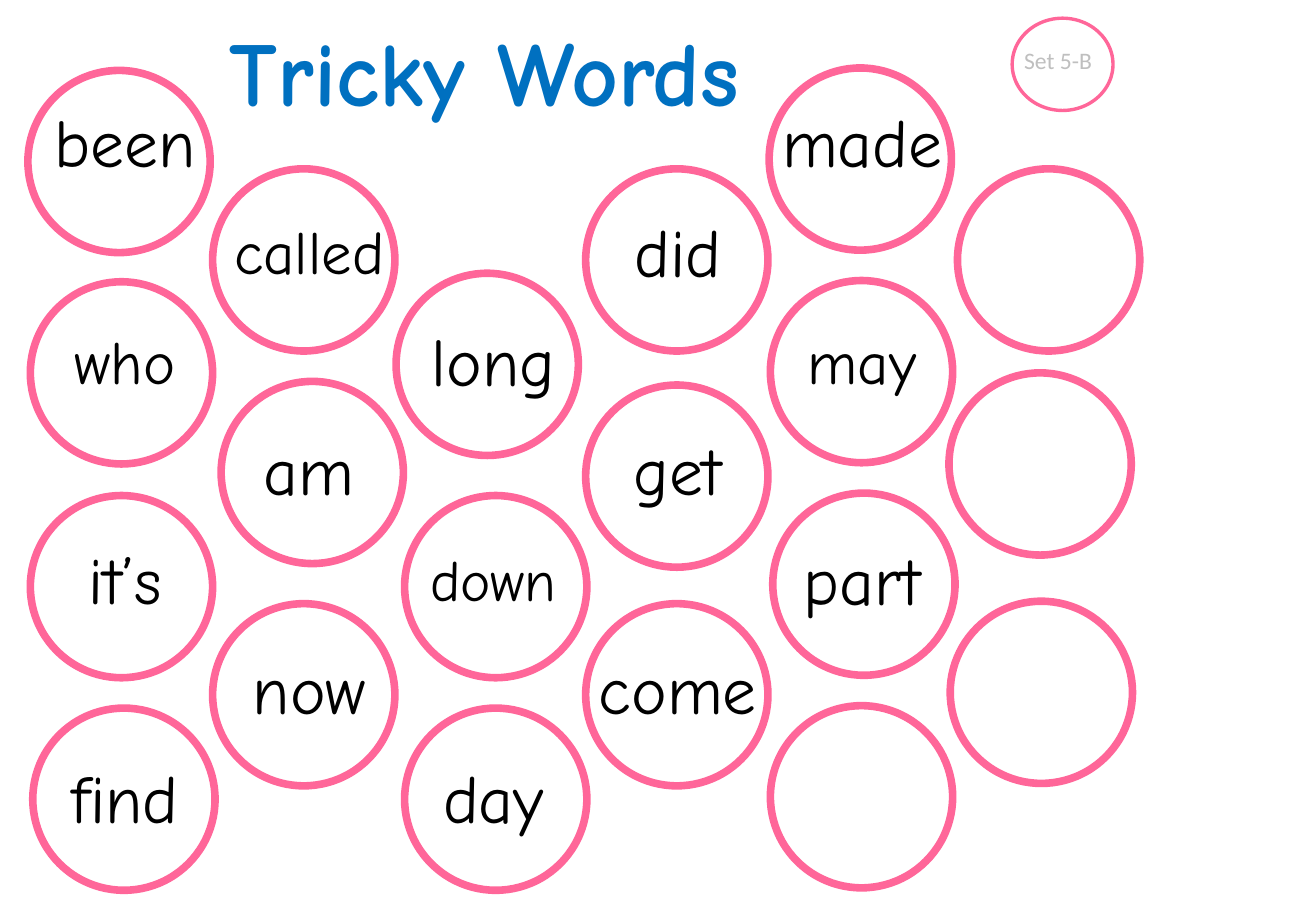
from dataclasses import dataclass

from pptx import Presentation
from pptx.dml.color import RGBColor
from pptx.enum.shapes import MSO_SHAPE
from pptx.enum.text import MSO_ANCHOR, MSO_AUTO_SIZE, PP_ALIGN
from pptx.util import Pt

PX = 9144  # 100 px to the inch
OVAL = MSO_SHAPE.OVAL
CENTER, LEFT = PP_ALIGN.CENTER, PP_ALIGN.LEFT
TOP, MIDDLE = MSO_ANCHOR.TOP, MSO_ANCHOR.MIDDLE
FIT_SHAPE = MSO_AUTO_SIZE.SHAPE_TO_FIT_TEXT
PLAIN_TABLE = "{2D5ABB26-0587-4C30-8999-92F81FD0307C}"
COLORS = {"ring": "FF6699", "title": "0070C0", "word": "000000",
          "tag": "BFBFBF", "paper": "FFFFFF"}
ROWS, COLS = 7, 6
RING = 150


@dataclass(frozen=True)
class Word:
    row: int
    col: int
    text: str
    size: int = 40


@dataclass(frozen=True)
class Ring:
    left: int
    top: int
    width: int = RING
    height: int = RING
    line: float = 4.5


WORDS = [
    Word(0, 0, "been"), Word(0, 4, "made"),
    Word(1, 1, "called", 36), Word(1, 3, "did"),
    Word(2, 0, "who", 36), Word(2, 2, "long"), Word(2, 4, "may", 36),
    Word(3, 1, "am"), Word(3, 3, "get"),
    Word(4, 0, "it’s", 39), Word(4, 2, "down", 34), Word(4, 4, "part"),
    Word(5, 1, "now"), Word(5, 3, "come"),
    Word(6, 0, "find"), Word(6, 2, "day"),
]
RINGS = [
    Ring(23, 58), Ring(25, 232), Ring(25, 408), Ring(27, 583),
    Ring(175, 139), Ring(182, 314), Ring(175, 497),
    Ring(326, 225), Ring(333, 408), Ring(333, 583),
    Ring(482, 139), Ring(482, 317), Ring(482, 497),
    Ring(633, 56), Ring(634, 231), Ring(636, 406), Ring(634, 581),
    Ring(788, 139), Ring(781, 307), Ring(782, 495),
    Ring(833, 15, 83, 76, line=2),
]


def rgb(name: str) -> RGBColor:
    return RGBColor.from_string(COLORS[name])


def box(*lengths: int) -> list[int]:
    """Turn px lengths into EMU."""
    return [n * PX for n in lengths]


def write(tf, text: str, *, size: int, color: str, font: str = "Comic Neue",
          bold: bool = False, align=CENTER) -> None:
    p = tf.paragraphs[0]
    p.alignment = align
    r = p.add_run()
    r.text = text
    r.font.name, r.font.size, r.font.bold = font, Pt(size), bold
    r.font.color.rgb = rgb(color)


def add_title(slide) -> None:
    sp = slide.shapes.title
    sp.left, sp.top, sp.width, sp.height = box(139, 8, 519, 101)
    tf = sp.text_frame
    tf.word_wrap = True
    tf.auto_size = FIT_SHAPE
    tf.vertical_anchor = TOP
    write(tf, "Tricky Words", size=54, color="title", bold=True)


def add_words(slide) -> None:
    frame = slide.shapes.add_table(ROWS, COLS, *box(27, 75, 910, 630))
    table = frame.table
    table.first_row = table.horz_banding = False
    table._tbl.tblPr.find("{*}tableStyleId").text = PLAIN_TABLE
    for cell in table.iter_cells():
        cell.fill.background()
        cell.vertical_anchor = MIDDLE
        cell.margin_left = cell.margin_right = 0
        cell.margin_top = cell.margin_bottom = 0
    for word in WORDS:
        write(table.cell(word.row, word.col).text_frame, word.text,
              size=word.size, color="word")


def add_tag(slide) -> None:
    sp = slide.shapes.add_textbox(*box(833, 33, 83, 34))
    sp.fill.solid()
    sp.fill.fore_color.rgb = rgb("paper")
    tf = sp.text_frame
    tf.word_wrap = True
    tf.auto_size = FIT_SHAPE
    write(tf, "Set 5-B", size=14, color="tag", font="Calibri", align=LEFT)


def add_ring(slide, ring: Ring) -> None:
    sp = slide.shapes.add_shape(
        OVAL, *box(ring.left, ring.top, ring.width, ring.height))
    sp.shadow.inherit = False
    sp.fill.background()
    sp.line.color.rgb = rgb("ring")
    sp.line.width = Pt(ring.line)


def main() -> None:
    prs = Presentation()
    prs.slide_width, prs.slide_height = box(1083, 750)
    slide = prs.slides.add_slide(prs.slide_layouts.get_by_name("Title Only"))
    add_title(slide)
    add_words(slide)
    add_tag(slide)
    for ring in RINGS:
        add_ring(slide, ring)
    prs.save("out.pptx")


if __name__ == "__main__":
    main()
